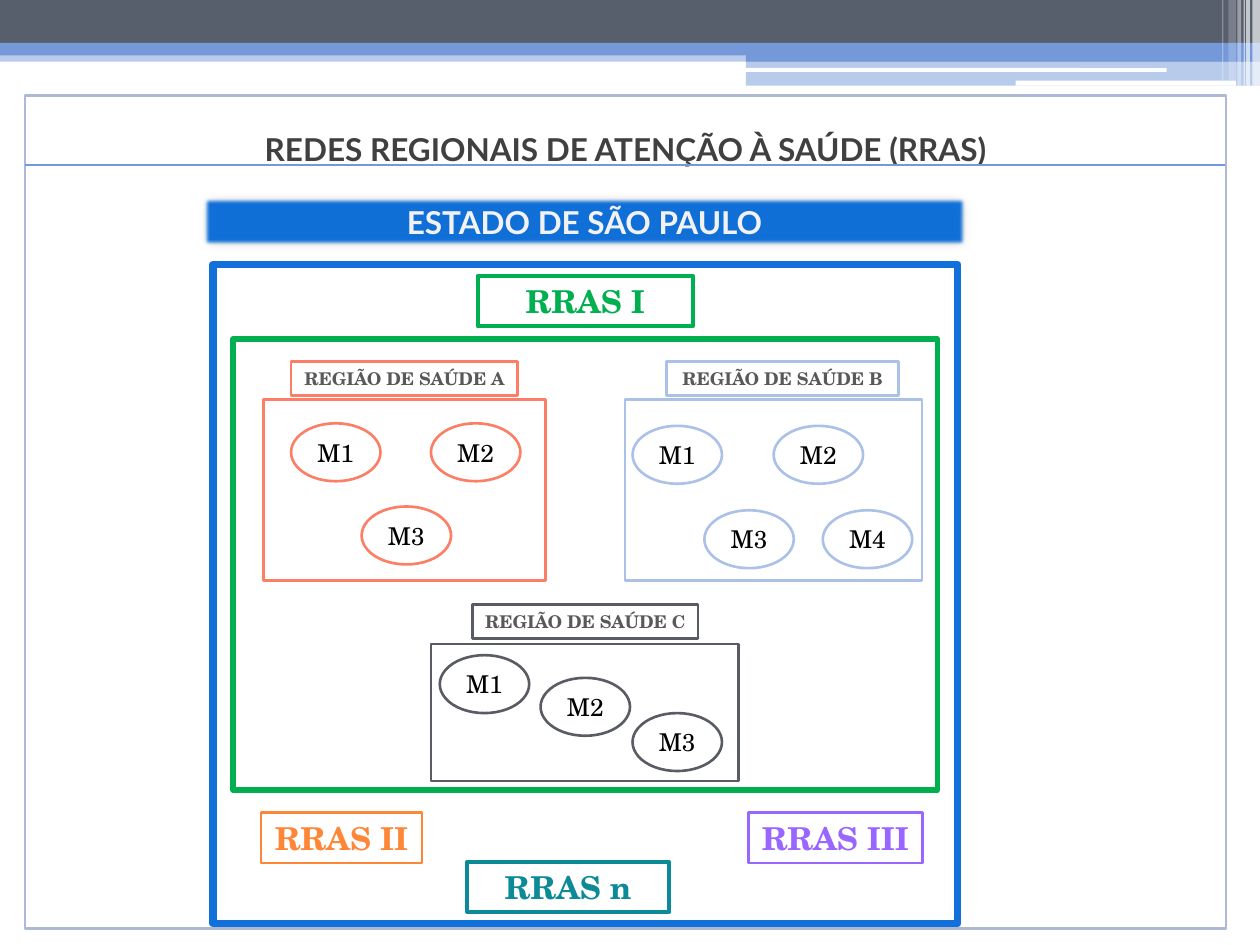
from lxml import etree
from pptx import Presentation
from pptx.dml.color import RGBColor
from pptx.enum.shapes import MSO_CONNECTOR, MSO_SHAPE as Preset
from pptx.enum.text import MSO_ANCHOR as Anchor, PP_ALIGN as Align
from pptx.oxml.ns import qn
from pptx.util import Inches, Pt

WHITE = RGBColor(0xFF, 0xFF, 0xFF)
BLACK = RGBColor(0x00, 0x00, 0x00)
SLATE = RGBColor(0x57, 0x5F, 0x6D)
SKY = RGBColor(0x75, 0x98, 0xD9)
PALE = RGBColor(0xAE, 0xBA, 0xD5)
TITLE = RGBColor(0x40, 0x40, 0x40)
LABEL = RGBColor(0x59, 0x59, 0x59)
CORAL = RGBColor(0xFB, 0x7E, 0x65)
ICE = RGBColor(0xAC, 0xC1, 0xE8)
GRAPHITE = RGBColor(0x59, 0x5D, 0x63)
GREEN = RGBColor(0x00, 0xB0, 0x50)
PURPLE = RGBColor(0x99, 0x66, 0xFF)
ORANGE = RGBColor(0xFE, 0x86, 0x37)
TEAL = RGBColor(0x0D, 0x8A, 0x97)
BLUE = RGBColor(0x11, 0x70, 0xD9)
OFF_WHITE = RGBColor(0xF2, 0xF2, 0xF2)

SANS = "Lato"
SERIF = "TeX Gyre Schola"

# left, top, width, height, colour, opacity in percent
HEADER_BANDS = [
    (0, 0.4, 10, 0.09, SKY, 50),
    (0, 0, 10, 0.34, SLATE, 100),
    (0, 0.34, 10, 0.1, SKY, 100),
    (5.92, 0.39, 4.08, 0.1, SKY, 100),
    (5.92, 0.48, 4.08, 0.2, SKY, 50),
]
HEADER_BARS = [(5.91, 0.54, 3.35, 0.03), (8.06, 0.64, 1.75, 0.04)]
# left, width, height, opacity in percent
HEADER_STRIPES = [
    (9.94, 0.06, 0.68, 65), (9.89, 0.03, 0.68, 65), (9.87, 0.01, 0.68, 60),
    (9.82, 0.03, 0.68, 40), (9.75, 0.06, 0.64, 20), (9.7, 0.01, 0.64, 30),
]
# letter, colour, frame, label, top-left corners of the municipalities M1, M2, ...
REGIONS = [
    ("A", CORAL, (2.09, 3.17, 2.24, 1.44), (2.31, 2.87, 1.8, 0.27),
     [(2.31, 3.36), (3.42, 3.36), (2.87, 4.02)]),
    ("B", ICE, (4.96, 3.17, 2.36, 1.44), (5.29, 2.87, 1.84, 0.27),
     [(5.02, 3.38), (6.14, 3.38), (5.59, 4.05), (6.53, 4.05)]),
    ("C", GRAPHITE, (3.42, 5.11, 2.44, 1.09), (3.75, 4.8, 1.79, 0.27),
     [(3.49, 5.2), (4.29, 5.38), (5.02, 5.66)]),
]
NETWORKS = [
    ("RRAS I", GREEN, (3.79, 2.19, 1.71, 0.4), 2.25),
    ("RRAS II", ORANGE, (2.07, 6.45, 1.28, 0.4), 1.5),
    ("RRAS III", PURPLE, (5.94, 6.45, 1.38, 0.4), 1.5),
    ("RRAS n", TEAL, (3.71, 6.84, 1.6, 0.4), 2.25),
]


def write(shape, text, font=SERIF, size=18, color=BLACK, bold=True,
          anchor=Anchor.MIDDLE, top=0.05):
    frame = shape.text_frame
    frame.word_wrap = False
    frame.vertical_anchor = anchor
    frame.margin_top = Inches(top)
    para = frame.paragraphs[0]
    para.alignment = Align.CENTER
    span = para.add_run()
    span.text = text
    span.font.name = font
    span.font.size = Pt(size)
    span.font.bold = bold
    span.font.color.rgb = color


class Painter:
    def __init__(self, page):
        self.page = page

    def box(self, at, fill=None, line=None, width=1.5, opacity=100, preset=Preset.RECTANGLE):
        shape = self.page.shapes.add_shape(preset, *map(Inches, at))
        shape.shadow.inherit = False
        if fill is None:
            shape.fill.background()
        else:
            shape.fill.solid()
            shape.fill.fore_color.rgb = fill
        if opacity < 100:
            color = shape.fill._xPr.find(f"{qn('a:solidFill')}/{qn('a:srgbClr')}")
            etree.SubElement(color, qn("a:alpha"), val=str(opacity * 1000))
        if line is None:
            shape.line.fill.background()
        else:
            shape.line.color.rgb = line
            shape.line.width = Pt(width)
        return shape

    def rule(self, x1, y1, x2, y2, color, width=1.5):
        line = self.page.shapes.add_connector(
            MSO_CONNECTOR.STRAIGHT, *map(Inches, (x1, y1, x2, y2)))
        line.line.color.rgb = color
        line.line.width = Pt(width)
        etree.SubElement(line._element.spPr, qn("a:effectLst"))

    def glow_banner(self, at, fill):
        """Filled box with a faint shadow and soft edges."""
        shape = self.box(at, fill)
        effects = shape._element.spPr.find(qn("a:effectLst"))
        shadow = etree.SubElement(effects, qn("a:outerShdw"), blurRad=str(Pt(6)),
                                  dist="0", dir=str(225 * 60000))
        color = etree.SubElement(shadow, qn("a:srgbClr"), val="000000")
        etree.SubElement(color, qn("a:alpha"), val="20000")
        etree.SubElement(effects, qn("a:softEdge"), rad=str(Pt(2.5)))
        return shape

    def header(self):
        for *at, color, opacity in HEADER_BANDS:
            self.box(at, color, opacity=opacity)
        for at in HEADER_BARS:
            self.box(at, WHITE, preset=Preset.ROUNDED_RECTANGLE)
        for left, width, height, opacity in HEADER_STRIPES:
            self.box((left, 0, width, height), WHITE, opacity=opacity)

    def region(self, letter, color, frame, label, corners):
        self.box(frame, line=color)
        write(self.box(label, WHITE, color), f"REGIÃO DE SAÚDE {letter}", size=10, color=LABEL)
        for number, corner in enumerate(corners, 1):
            oval = self.box((*corner, 0.71, 0.46), WHITE, color, preset=Preset.OVAL)
            write(oval, f"M{number}", size=14, bold=False)


def main():
    deck = Presentation()
    deck.slide_width, deck.slide_height = Inches(10), Inches(7.5)
    painter = Painter(deck.slides.add_slide(deck.slide_layouts[6]))

    painter.header()
    panel = painter.box((0.2, 0.76, 9.53, 6.61), WHITE, PALE)
    write(panel, "REDES REGIONAIS DE ATENÇÃO À SAÚDE (RRAS)", font=SANS, color=TITLE,
          anchor=Anchor.TOP, top=0.27)
    for region in REGIONS:
        painter.region(*region)
    painter.box((1.85, 2.69, 5.59, 3.58), line=GREEN, width=3)
    painter.box((1.69, 2.1, 5.91, 5.23), line=BLUE, width=4.5)
    for name, color, at, width in NETWORKS:
        write(painter.box(at, WHITE, color, width), name, color=color)
    banner = painter.glow_banner((1.61, 1.56, 6.06, 0.4), BLUE)
    write(banner, "ESTADO DE SÃO PAULO", font=SANS, color=OFF_WHITE)
    painter.rule(0.2, 1.31, 9.72, 1.31, SKY)

    deck.save("out.pptx")


if __name__ == "__main__":
    main()
